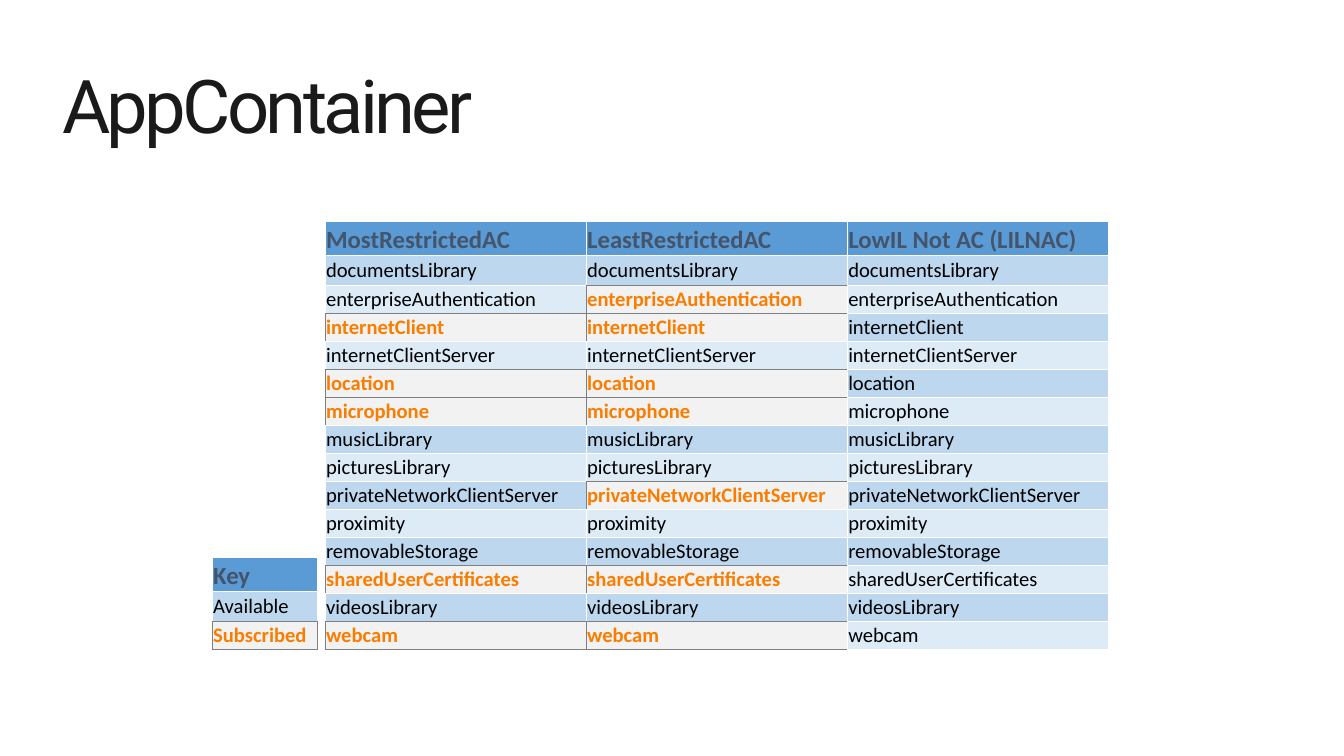
from dataclasses import dataclass

import lxml.etree
import pptx
import pptx.dml.color
import pptx.enum.text
import pptx.oxml
import pptx.oxml.ns
import pptx.util

Cm, Pt = pptx.util.Cm, pptx.util.Pt
RGB = pptx.dml.color.RGBColor.from_string
Anchor = pptx.enum.text.MSO_ANCHOR


@dataclass(frozen=True)
class Theme:
    title_font: str = "Roboto"
    table_font: str = "Calibri"
    title_size: float = 54
    title_leading: float = 65.3
    title_tracking: float = -2.7
    header_size: float = 18
    body_size: float = 15
    border_width: float = 0.5
    title_ink: str = "1A1A1A"
    header_ink: str = "44546A"
    header_fill: str = "5B9BD5"
    body_ink: str = "000000"
    band_fills: tuple = ("DDEBF7", "BDD7EE")
    subscribed_ink: str = "FA7D00"
    subscribed_fill: str = "F2F2F2"
    subscribed_border: str = "7F7F7F"
    border: str = "FFFFFF"


class SlideBuilder:
    def __init__(self, slide, theme):
        self.slide = slide
        self.theme = theme

    def title(self, text, left, top, width, height):
        theme = self.theme
        heading = self.slide.shapes.title
        heading.left, heading.top = Cm(left), Cm(top)
        heading.width, heading.height = Cm(width), Cm(height)
        frame = heading.text_frame
        frame.text = text
        frame.word_wrap = True
        frame.auto_size = pptx.enum.text.MSO_AUTO_SIZE.NONE
        frame.vertical_anchor = Anchor.BOTTOM
        frame.margin_left = 0
        paragraph = frame.paragraphs[0]
        paragraph.alignment = pptx.enum.text.PP_ALIGN.LEFT
        paragraph.line_spacing = Pt(theme.title_leading)
        run = paragraph.runs[0]
        self.format_run(run, theme.title_font, theme.title_size, theme.title_ink)
        run.font._element.set("spc", str(round(theme.title_tracking * 100)))

    def table(self, columns, subscribed, left, top, column_width, row_heights):
        """Each column is a list of texts; subscribed holds (row, column) pairs."""
        size = len(row_heights), len(columns)
        grid = self.slide.shapes.add_table(
            *size, Cm(left), Cm(top),
            Cm(column_width * len(columns)), Cm(sum(row_heights))).table
        grid.first_row = grid.horz_banding = False
        for column in grid.columns:
            column.width = Cm(column_width)
        for row, height in zip(grid.rows, row_heights):
            row.height = Cm(height)
        for c, texts in enumerate(columns):
            for r, text in enumerate(texts):
                cell = grid.cell(r, c)
                self.cell_borders(cell, r, c, size, subscribed)
                self.cell_content(cell, text, r, (r, c) in subscribed)

    def cell_content(self, cell, text, row, is_subscribed):
        theme = self.theme
        is_header = row == 0
        if is_header:
            ink, fill = theme.header_ink, theme.header_fill
        elif is_subscribed:
            ink, fill = theme.subscribed_ink, theme.subscribed_fill
        else:
            ink, fill = theme.body_ink, theme.band_fills[row % 2]
        cell.fill.solid()
        cell.fill.fore_color.rgb = RGB(fill)
        cell.margin_left = cell.margin_right = cell.margin_top = Cm(0.02)
        cell.margin_bottom = 0
        cell.vertical_anchor = Anchor.BOTTOM if is_header else Anchor.MIDDLE
        cell.text_frame.text = text
        self.format_run(cell.text_frame.paragraphs[0].runs[0], theme.table_font,
                        theme.header_size if is_header else theme.body_size,
                        ink, is_header or is_subscribed)

    def cell_borders(self, cell, row, column, size, subscribed):
        # A shared edge takes its colour from the cell to its right or below
        right = row, min(column + 1, size[1] - 1)
        below = min(row + 1, size[0] - 1), column
        own = row, column
        properties = cell._tc.get_or_add_tcPr()
        for tag, owner in (("a:lnL", own), ("a:lnR", right),
                           ("a:lnT", own), ("a:lnB", below)):
            color = (self.theme.subscribed_border if owner in subscribed
                     else self.theme.border)
            line = lxml.etree.SubElement(properties, pptx.oxml.ns.qn(tag),
                                         w=str(Pt(self.theme.border_width)))
            fill = lxml.etree.SubElement(line, pptx.oxml.ns.qn("a:solidFill"))
            lxml.etree.SubElement(fill, pptx.oxml.ns.qn("a:srgbClr"), val=color)

    def format_run(self, run, font, size, ink, bold=False):
        run.font.name = font
        run.font.size = Pt(size)
        run.font.bold = bold
        run.font.color.rgb = RGB(ink)


CAPABILITIES = [
    "documentsLibrary", "enterpriseAuthentication", "internetClient",
    "internetClientServer", "location", "microphone", "musicLibrary",
    "picturesLibrary", "privateNetworkClientServer", "proximity",
    "removableStorage", "sharedUserCertificates", "videosLibrary", "webcam",
]
MOST_RESTRICTED = {"internetClient", "location", "microphone",
                   "sharedUserCertificates", "webcam"}
LEAST_RESTRICTED = MOST_RESTRICTED | {"enterpriseAuthentication",
                                      "privateNetworkClientServer"}
CONTAINERS = {
    "MostRestrictedAC": MOST_RESTRICTED,
    "LeastRestrictedAC": LEAST_RESTRICTED,
    "LowIL Not AC (LILNAC)": set(),
}
HEADER_HEIGHT, FIRST_HEIGHT, ROW_HEIGHT = 0.87, 0.77, 0.72


def main():
    presentation = pptx.Presentation()
    presentation.slide_width, presentation.slide_height = Cm(34.54), Cm(19.43)
    title_only = presentation.slide_layouts[5]
    builder = SlideBuilder(presentation.slides.add_slide(title_only), Theme())

    # Title
    builder.title("AppContainer", 1.6, 0.71, 31.27, 3.23)

    # Capabilities of each container
    subscribed = {(r, c) for c, granted in enumerate(CONTAINERS.values())
                  for r, name in enumerate(CAPABILITIES, 1) if name in granted}
    row_heights = [HEADER_HEIGHT, FIRST_HEIGHT]
    row_heights += [ROW_HEIGHT] * (len(CAPABILITIES) - 1)
    builder.table([[name, *CAPABILITIES] for name in CONTAINERS], subscribed,
                  8.36, 5.69, 6.71, row_heights)

    # Key
    builder.table([["Key", "Available", "Subscribed"]], {(2, 0)},
                  5.46, 14.33, 2.69, row_heights[:3])

    presentation.save("out.pptx")


if __name__ == "__main__":
    main()
